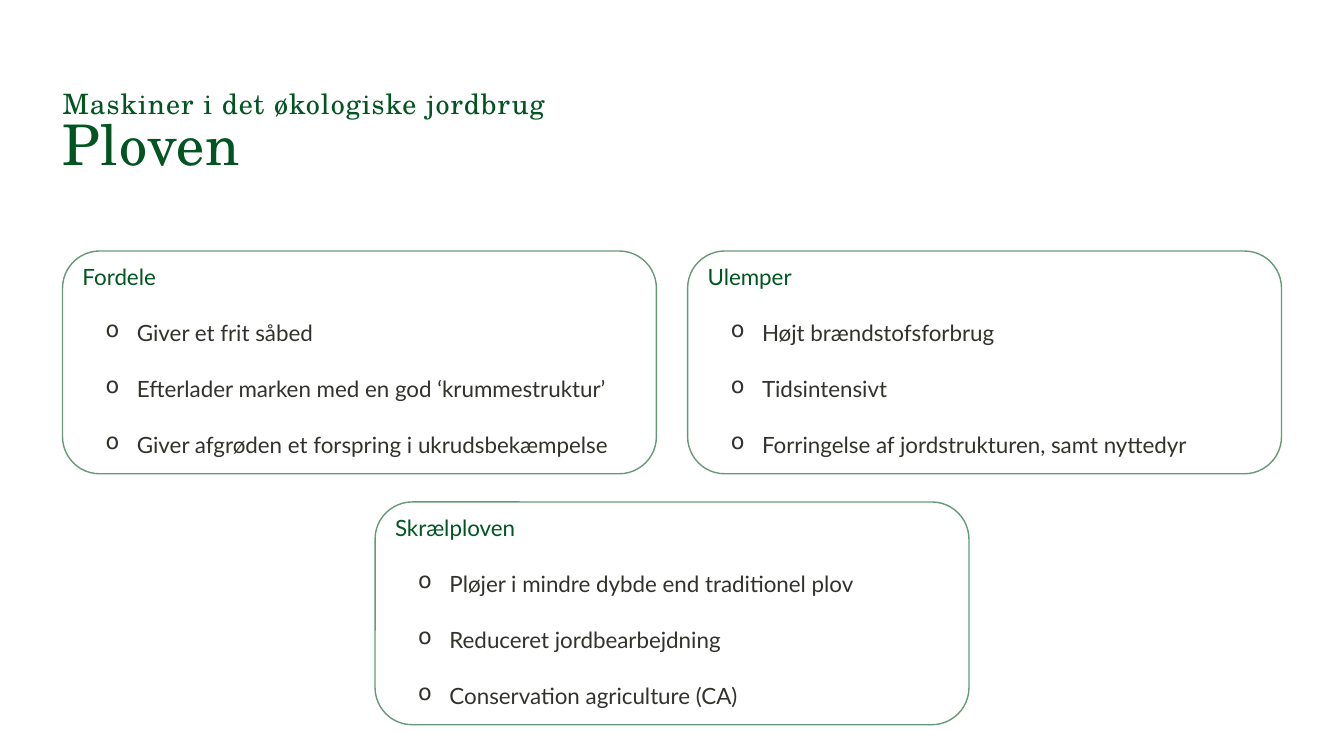
"""Build a slide on the plough: advantages, drawbacks and the skim plough."""
import pptx
import pptx.dml.color
import pptx.enum.shapes
import pptx.enum.text
import pptx.oxml
import pptx.oxml.ns
import pptx.util

Inches, Pt = pptx.util.Inches, pptx.util.Pt
RGBColor = pptx.dml.color.RGBColor

TOPIC, HEADLINE = "Maskiner i det økologiske jordbrug", "Ploven"
CARDS = [
    ("Fordele", ["Giver et frit såbed",
                 "Efterlader marken med en god ‘krummestruktur’",
                 "Giver afgrøden et forspring i ukrudsbekæmpelse"]),
    ("Ulemper", ["Højt brændstofsforbrug",
                 "Tidsintensivt",
                 "Forringelse af jordstrukturen, samt nyttedyr"]),
    ("Skrælploven", ["Pløjer i mindre dybde end traditionel plov",
                     "Reduceret jordbearbejdning",
                     "Conservation agriculture (CA)"]),
]
GREEN = RGBColor(0x00, 0x55, 0x21)
PALE_GREEN = RGBColor(0x66, 0x99, 0x7A)
DARK = RGBColor(0x32, 0x32, 0x2D)
WHITE = RGBColor(0xFF, 0xFF, 0xFF)

LEFT, CARD_TOP = 0.62, 2.49
CARD_WIDTH, CARD_HEIGHT = 5.89, 2.21
COLUMN_STEP, ROW_STEP = 6.2, 2.49
CARD_CELLS = [(0, 0), (1, 0), (0.5, 1)]


def prepare_frame(frame):
    """Set wrapping, top anchoring and zero margins."""
    frame.word_wrap = True
    frame.vertical_anchor = pptx.enum.text.MSO_ANCHOR.TOP
    frame.margin_left = frame.margin_right = 0
    frame.margin_top = frame.margin_bottom = 0


def indent(paragraph, margin, hanging=0, bullet=None):
    """Set the indents of a paragraph and its optional bullet."""
    properties = paragraph._p.get_or_add_pPr()
    properties.set("marL", str(Inches(margin)))
    properties.set("indent", str(-Inches(hanging)))
    if bullet:
        properties.append(pptx.oxml.parse_xml(
            f'<a:buChar {pptx.oxml.ns.nsdecls("a")} char="{bullet}"/>'))


def add_title(slide):
    """Add the topic line and the headline below it."""
    title = slide.shapes.add_textbox(
        Inches(LEFT), Inches(0.91), Inches(12.08), Inches(1.14))
    prepare_frame(title.text_frame)
    paragraph = title.text_frame.paragraphs[0]
    paragraph.text = f"{TOPIC}\v{HEADLINE}"
    paragraph.line_spacing = 0.85
    for run, size in zip(paragraph.runs, (20, 40)):
        run.font.name = "TeX Gyre Schola"
        run.font.size = Pt(size)
        run.font.color.rgb = GREEN
        run.font._element.set("spc", "70")


def add_card(slide, cell, heading, points):
    """Add a rounded card with a heading and bulleted points."""
    column, row = cell
    card = slide.shapes.add_shape(
        pptx.enum.shapes.MSO_SHAPE.ROUNDED_RECTANGLE,
        Inches(LEFT + column * COLUMN_STEP), Inches(CARD_TOP + row * ROW_STEP),
        Inches(CARD_WIDTH), Inches(CARD_HEIGHT))
    card.shadow.inherit = False
    card.fill.solid()
    card.fill.fore_color.rgb = WHITE
    card.line.color.rgb = PALE_GREEN
    card.line.width = Pt(1)
    prepare_frame(card.text_frame)
    card.text_frame.text = "\n".join([heading, *points])
    for index, paragraph in enumerate(card.text_frame.paragraphs):
        if index == 0:
            indent(paragraph, 0.09)
        else:
            paragraph.level = 1
            indent(paragraph, 0.63, 0.31, "o")
        paragraph.alignment = pptx.enum.text.PP_ALIGN.LEFT
        paragraph.line_spacing = Pt(20)
        paragraph.space_after = Pt(20)
        for run in paragraph.runs:
            run.font.name = "Lato"
            run.font.size = Pt(16)
            run.font.color.rgb = DARK if index else GREEN


def main():
    """Build and save the slide."""
    presentation = pptx.Presentation()
    presentation.slide_width = Inches(13.33)
    presentation.slide_height = Inches(7.5)
    slide = presentation.slides.add_slide(presentation.slide_layouts[6])
    add_title(slide)
    for cell, (heading, points) in zip(CARD_CELLS, CARDS):
        add_card(slide, cell, heading, points)
    presentation.save("out.pptx")


if __name__ == "__main__":
    main()
